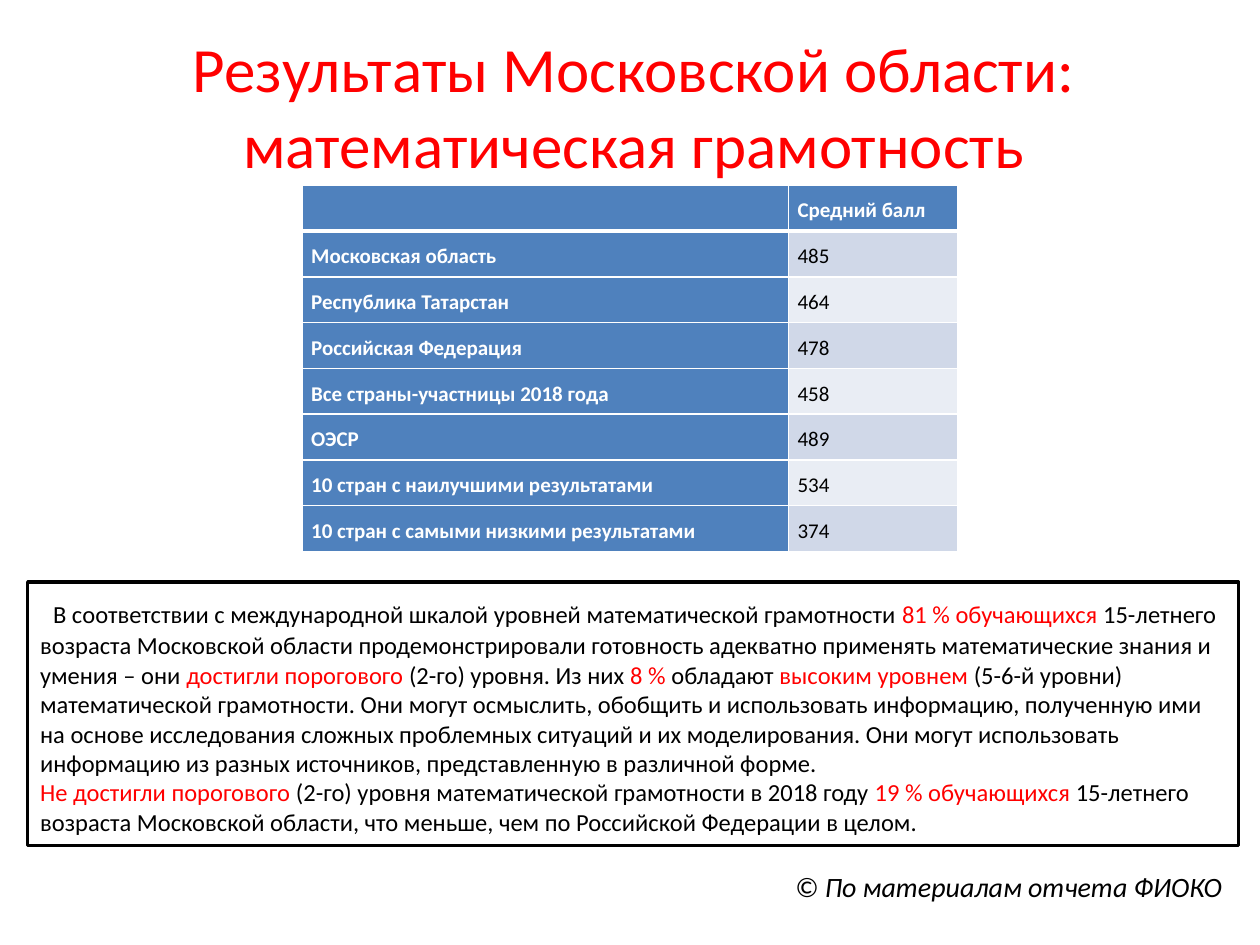
"""Build the slide on mathematical literacy results of the Moscow region."""
from lxml import etree
from pptx import Presentation, util as u
from pptx.dml.color import RGBColor
from pptx.enum import shapes, text
from pptx.oxml.ns import qn

TITLE = "Результаты Московской области: математическая грамотность"
ROWS = [
    ("", "Средний балл"),
    ("Московская область", "485"),
    ("Республика Татарстан", "464"),
    ("Российская Федерация", "478"),
    ("Все страны-участницы 2018 года", "458"),
    ("ОЭСР", "489"),
    ("10 стран с наилучшими результатами", "534"),
    ("10 стран с самыми низкими результатами", "374"),
]
NOTES = [
    [
        (" ", "lead"),
        ("В соответствии с международной шкалой уровней математической грамотности ", "body"),
        ("81 % обучающихся ", "mark"),
        ("15-летнего возраста Московской области продемонстрировали готовность адекватно "
         "применять математические знания и умения – они ", "body"),
        ("достигли порогового ", "mark"),
        ("(2-го) уровня. Из них ", "body"),
        ("8 %", "mark"),
        (" обладают ", "body"),
        ("высоким уровнем ", "mark"),
        ("(5-6-й уровни) математической грамотности. Они могут осмыслить, обобщить и "
         "использовать информацию, полученную ими на основе исследования сложных проблемных "
         "ситуаций и их моделирования. Они могут использовать информацию из разных "
         "источников, представленную в различной форме.", "body"),
    ],
    [
        ("Не достигли порогового ", "mark"),
        ("(2-го) уровня математической грамотности в 2018 году ", "body"),
        ("19 % обучающихся ", "mark"),
        ("15-летнего возраста Московской области, что меньше, чем по Российской Федерации "
         "в целом.", "body"),
    ],
]
CREDIT = "© По материалам отчета ФИОКО"

THEME = {
    "font": "Calibri",
    "black": "000000",
    "white": "FFFFFF",
    "head": "4F81BD",
    "bands": ("D0D8E8", "E9EDF4"),
    "styles": {
        "title": ("FF0000", {"size": u.Pt(36)}),
        "lead": ("000000", {"size": u.Pt(20)}),
        "body": ("000000", {"size": u.Pt(14)}),
        "mark": ("FF0000", {"size": u.Pt(14)}),
        "credit": ("000000", {"size": u.Pt(16), "italic": True}),
        "label": ("FFFFFF", {"size": u.Pt(12), "bold": True}),
        "score": ("000000", {"size": u.Pt(12), "bold": False}),
    },
}
PLACES = {
    "title": (0.53, 0.21, 9, 1.25),
    "table": (2.4, 1.47, 5.2, 2.91),
    "notes": (0.22, 4.62, 9.61, 2.09),
    "credit": (0.02, 6.85, 9.78, 0.37),
}
COLS = (3.86, 1.34)


def place(name):
    return [u.Inches(v) for v in PLACES[name]]


def apply(item, values):
    for name, value in values.items():
        setattr(item, name, value)


def paint(fill, tone):
    fill.solid()
    fill.fore_color.rgb = RGBColor.from_string(tone)


def write(para, words, style, **form):
    tone, font = THEME["styles"][style]
    run = para.add_run()
    run.text = words
    apply(run.font, {"name": THEME["font"], **font})
    run.font.color.rgb = RGBColor.from_string(tone)
    apply(para, form)


def border(cell, widths):
    props = cell._tc.get_or_add_tcPr()
    for spot, (side, width) in enumerate(zip("LRTB", widths)):
        line = etree.Element(qn(f"a:ln{side}"), w=str(u.Pt(width)))
        fill = etree.SubElement(line, qn("a:solidFill"))
        etree.SubElement(fill, qn("a:srgbClr"), val=THEME["white"])
        props.insert(spot, line)


def add_title(slide):
    box = slide.shapes.title
    apply(box, dict(zip(("left", "top", "width", "height"), place("title"))))
    apply(box.text_frame, {"word_wrap": True, "auto_size": text.MSO_AUTO_SIZE.NONE,
                           "vertical_anchor": text.MSO_ANCHOR.MIDDLE})
    write(box.text_frame.paragraphs[0], TITLE, "title", alignment=text.PP_ALIGN.CENTER)


def add_scores(slide):
    table = slide.shapes.add_table(len(ROWS), len(COLS), *place("table")).table
    for col, width in zip(table.columns, COLS):
        col.width = u.Inches(width)
    side = u.Inches(0.07)
    for r, row in enumerate(ROWS):
        for c, words in enumerate(row):
            cell = table.cell(r, c)
            head = r == 0 or c == 0
            apply(cell, {"margin_left": side, "margin_right": side,
                         "margin_top": 0, "margin_bottom": 0})
            paint(cell.fill, THEME["head"] if head else THEME["bands"][(r - 1) % 2])
            border(cell, (1, 1, 3 if r == 1 else 1, 3 if r == 0 else 1))
            if words:
                write(cell.text_frame.paragraphs[0], words, "label" if head else "score",
                      alignment=text.PP_ALIGN.JUSTIFY, line_spacing=1.5)


def add_notes(slide):
    box = slide.shapes.add_shape(shapes.MSO_SHAPE.RECTANGLE, *place("notes"))
    box.shadow.inherit = False
    paint(box.fill, THEME["white"])
    paint(box.line.fill, THEME["black"])
    box.line.width = u.Pt(2)
    frame = box.text_frame
    apply(frame, {"word_wrap": True, "vertical_anchor": text.MSO_ANCHOR.TOP})
    for n, runs in enumerate(NOTES):
        para = frame.add_paragraph() if n else frame.paragraphs[0]
        for words, style in runs:
            write(para, words, style, alignment=text.PP_ALIGN.LEFT)
    frame.paragraphs[0]._p.get_or_add_pPr().set("indent", str(u.Inches(0.04)))


def add_credit(slide):
    frame = slide.shapes.add_textbox(*place("credit")).text_frame
    frame.word_wrap = True
    write(frame.paragraphs[0], CREDIT, "credit", alignment=text.PP_ALIGN.RIGHT)


def main():
    deck = Presentation()
    apply(deck, {"slide_width": u.Inches(10), "slide_height": u.Inches(7.5)})
    slide = deck.slides.add_slide(deck.slide_layouts[5])
    for add in (add_title, add_notes, add_credit, add_scores):
        add(slide)
    deck.save("out.pptx")


if __name__ == "__main__":
    main()
